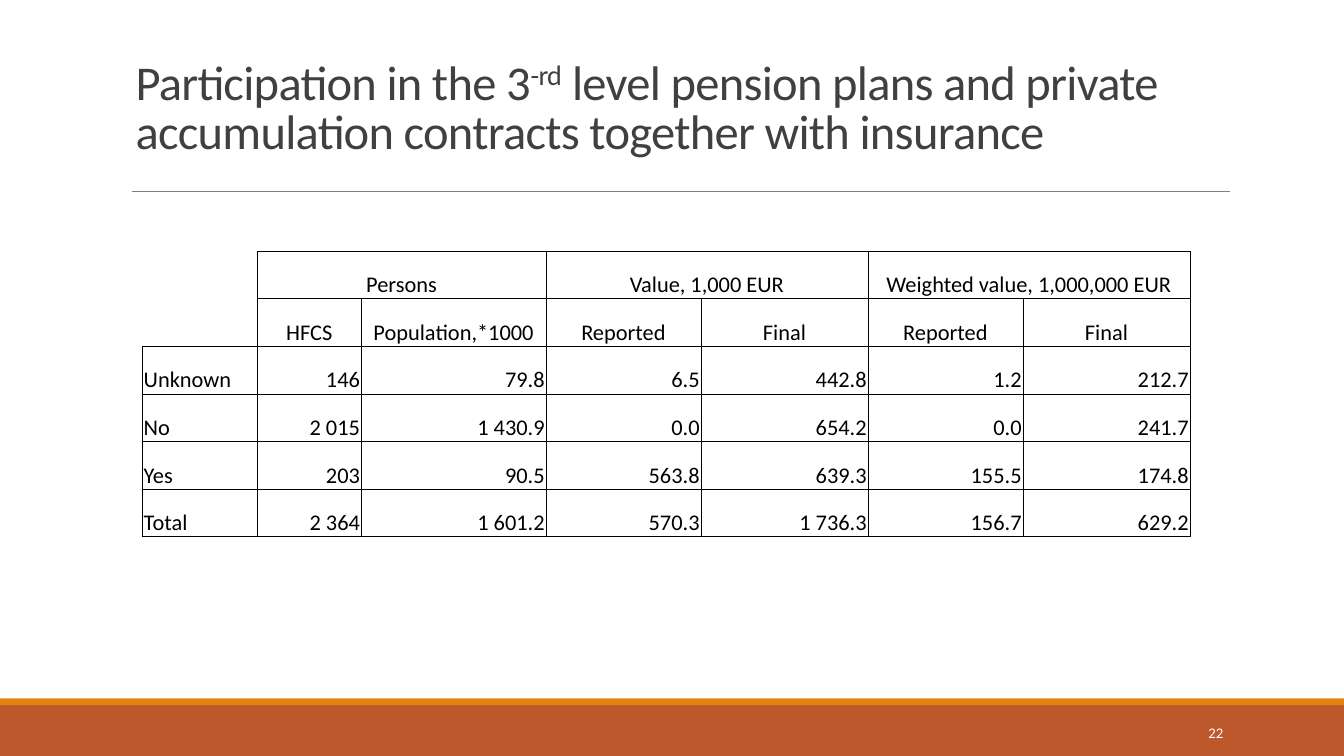
import pptx
import pptx.util
import pptx.dml.color
import pptx.enum.shapes
import pptx.enum.text
import pptx.oxml.ns
from lxml import etree

Pt = pptx.util.Pt
ALIGN = pptx.enum.text.PP_ALIGN
ANCHOR = pptx.enum.text.MSO_ANCHOR
HEX = {"rust": "BD582C", "amber": "E48312", "rule": "808080",
       "title": "404040", "ink": "000000", "white": "FFFFFF"}
HEADS = ["Persons", "Value, 1,000 EUR", "Weighted value, 1,000,000 EUR"]
ROWS = [
    ["", "HFCS", "Population,*1000", "Reported", "Final", "Reported", "Final"],
    ["Unknown", "146", "79.8", "6.5", "442.8", "1.2", "212.7"],
    ["No", "2 015", "1 430.9", "0.0", "654.2", "0.0", "241.7"],
    ["Yes", "203", "90.5", "563.8", "639.3", "155.5", "174.8"],
    ["Total", "2 364", "1 601.2", "570.3", "1 736.3", "156.7", "629.2"],
]
WIDTHS = [61.5, 55.75, 99, 83, 89.5, 83, 89.5]


def color(name):
    """Return the named colour."""
    return pptx.dml.color.RGBColor.from_string(HEX[name])


def apply(item, **values):
    """Set each given attribute on the item."""
    for key, value in values.items():
        setattr(item, key, value)


def tag(parent, name, **values):
    """Add a DrawingML child element."""
    return etree.SubElement(parent, pptx.oxml.ns.qn("a:" + name), **values)


def write(para, text, size, shade):
    """Add a styled run to a paragraph."""
    run = para.add_run()
    run.text = text
    apply(run.font, size=Pt(size), name="Calibri")
    run.font.color.rgb = color(shade)
    return run


def label(slide, box, anchor):
    """Add a wrapping text box and return its first paragraph."""
    frame = slide.shapes.add_textbox(*map(Pt, box)).text_frame
    apply(frame, word_wrap=True, vertical_anchor=anchor)
    return frame.paragraphs[0]


def band(slide, box, shade):
    """Draw a plain filled bar."""
    bar = slide.shapes.add_shape(
        pptx.enum.shapes.MSO_SHAPE.RECTANGLE, *map(Pt, box))
    bar.shadow.inherit = False
    bar.fill.solid()
    bar.fill.fore_color.rgb = color(shade)
    bar.line.fill.background()


def header(slide, left, top, width, height):
    """Place the title and the rule below it."""
    para = label(slide, (left, top, width, height), ANCHOR.BOTTOM)
    para.line_spacing = 0.85
    parts = [("Participation in the 3", 0), ("-rd", 30000),
             (" level pension plans and private accumulation contracts"
              " together with insurance", 0)]
    for text, base in parts:
        props = write(para, text, 26, "title").font._element
        props.set("spc", "-40")
        props.set("baseline", str(base))
    level = top + height + 13.5
    rule = slide.shapes.add_connector(
        pptx.enum.shapes.MSO_CONNECTOR.STRAIGHT,
        Pt(left + 5), Pt(level), Pt(left + width + 21), Pt(level))
    rule.line.color.rgb = color("rule")
    rule.line.width = Pt(0.5)
    tag(rule._element.spPr, "effectLst")


def footer(slide, left, top, width, height):
    """Place the two bars and the slide number."""
    band(slide, (left, top + 3.6, width, height - 3.6), "rust")
    band(slide, (left, top, width, 3.6), "amber")
    box = (left + width - 135.5, top + 7.5, 78, 21.5)
    para = label(slide, box, ANCHOR.MIDDLE)
    para.alignment = ALIGN.RIGHT
    write(para, "22", 7.9, "white")


def edge(cell, sides):
    """Draw the listed cell sides and clear the others."""
    props = cell._tc.get_or_add_tcPr()
    for side in "LRTB":
        line = tag(props, "ln" + side, w=str(Pt(0.5)))
        if side in sides:
            tag(tag(line, "solidFill"), "srgbClr", val=HEX["ink"])
        else:
            tag(line, "noFill")


def fill(cell, text, align, sides):
    """Format one table cell and write its text."""
    apply(cell, margin_left=Pt(0.7), margin_right=Pt(0.7),
          margin_top=Pt(0.7), margin_bottom=0,
          vertical_anchor=ANCHOR.BOTTOM)
    edge(cell, sides)
    cell.fill.background()
    para = cell.text_frame.paragraphs[0]
    para.alignment = align
    if text:
        write(para, text, 12, "ink")


def results(slide, left, top, width, height):
    """Place the table of persons and values."""
    top_row = [""] + [text for head in HEADS for text in (head, "")]
    data = [top_row] + ROWS
    grid = slide.shapes.add_table(
        len(data), len(WIDTHS), *map(Pt, (left, top, width, height))).table
    apply(grid, first_row=False, horz_banding=False)
    for col, size in zip(grid.columns, WIDTHS):
        col.width = Pt(size)
    for row in grid.rows:
        row.height = Pt(height / len(data))
    for y, texts in enumerate(data):
        for x, text in enumerate(texts):
            align = ALIGN.CENTER if y < 2 else ALIGN.RIGHT if x else ALIGN.LEFT
            sides = "LRTB" if x or y > 1 else ("R", "RB")[y]
            fill(grid.cell(y, x), text, align, sides)
    for x in range(1, len(WIDTHS), 2):
        grid.cell(0, x).merge(grid.cell(0, x + 1))


def main():
    """Build and save the slide."""
    deck = pptx.Presentation()
    apply(deck, slide_width=Pt(720), slide_height=Pt(405))
    slide = deck.slides.add_slide(deck.slide_layouts[6])
    footer(slide, 0, 374.2, 720, 30.8)
    header(slide, 65.5, 26.5, 572.5, 62.5)
    results(slide, 76.3, 134.6, sum(WIDTHS), 153)
    deck.save("out.pptx")


if __name__ == "__main__":
    main()
